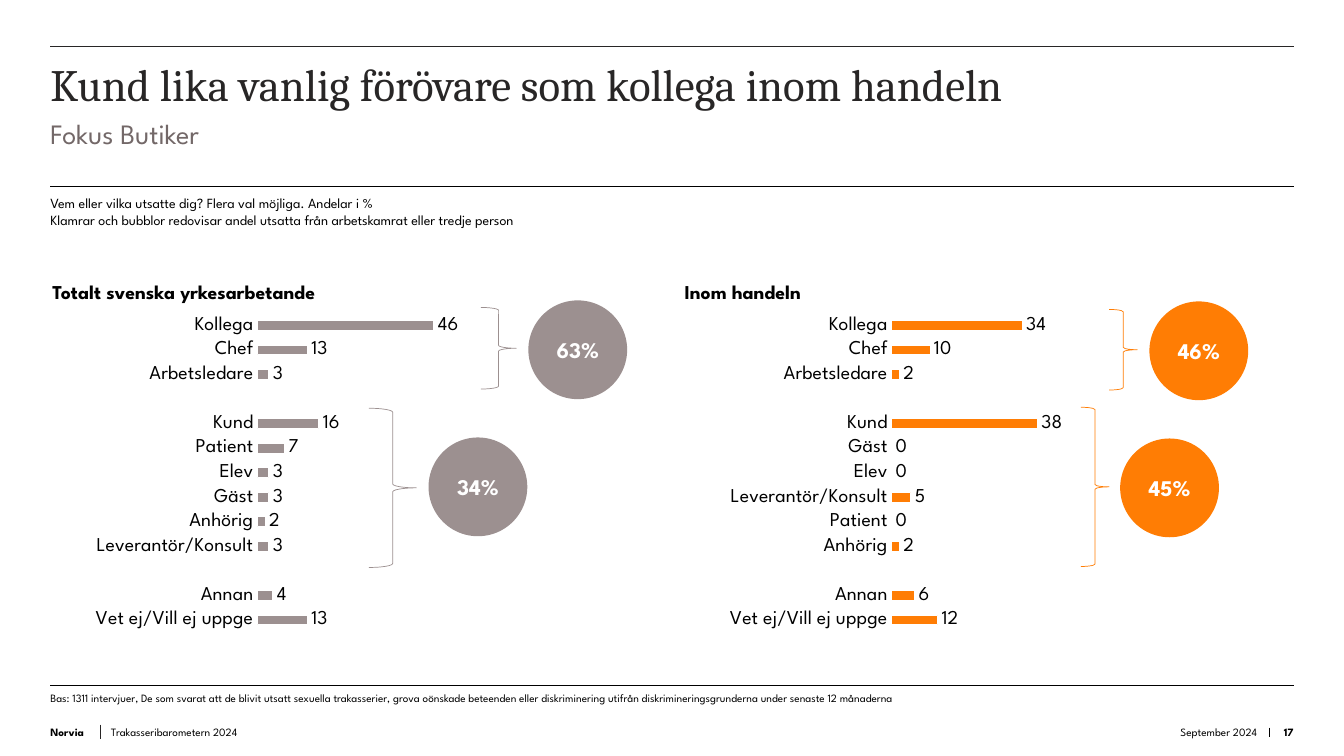
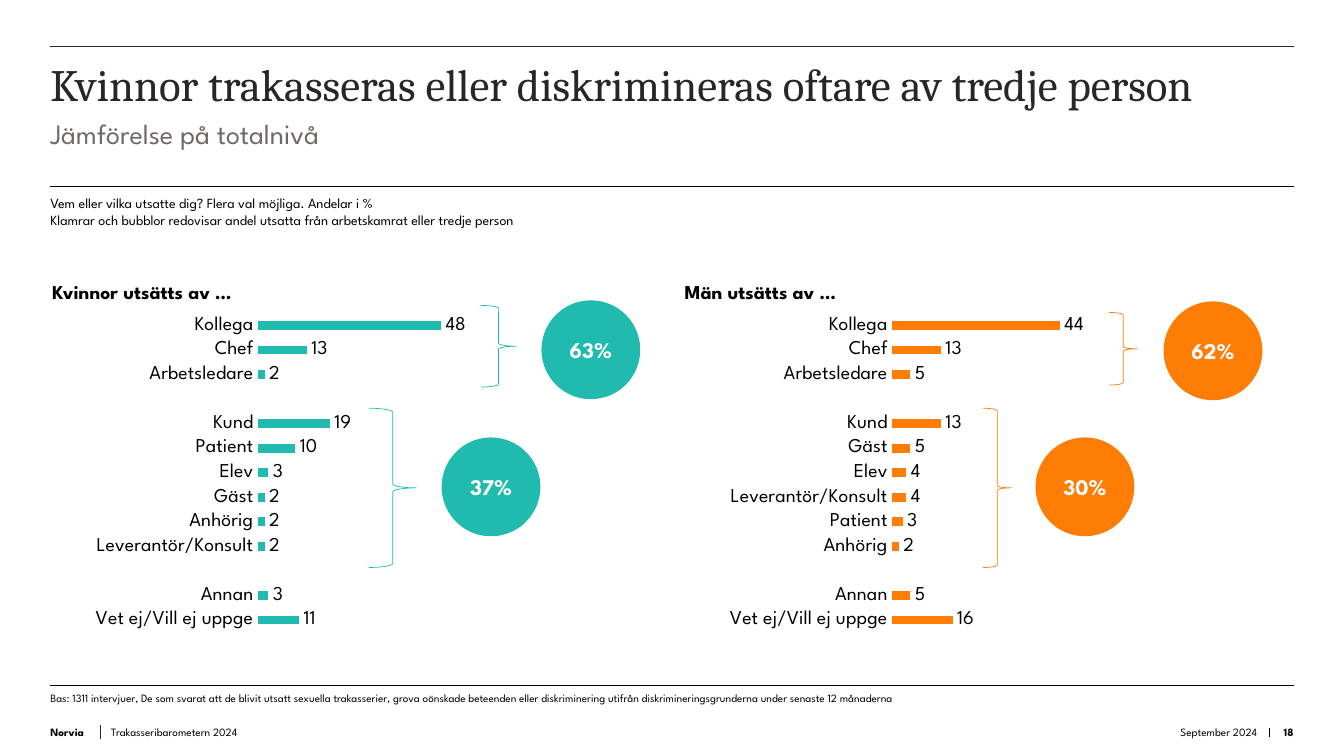
from pptx import Presentation
from pptx.chart.data import CategoryChartData
from pptx.dml.color import RGBColor
from pptx.enum.chart import XL_CHART_TYPE, XL_LABEL_POSITION, XL_TICK_MARK
from pptx.enum.shapes import MSO_CONNECTOR, MSO_SHAPE
from pptx.enum.text import MSO_ANCHOR, PP_ALIGN
from pptx.oxml import parse_xml
from pptx.oxml.ns import nsdecls, qn
from pptx.oxml.xmlchemy import OxmlElement
from pptx.util import Pt

BAR_CLUSTERED = XL_CHART_TYPE.BAR_CLUSTERED
OUTSIDE_END = XL_LABEL_POSITION.OUTSIDE_END
NO_TICK = XL_TICK_MARK.NONE
STRAIGHT = MSO_CONNECTOR.STRAIGHT
ELLIPSE, RIGHT_BRACE = MSO_SHAPE.OVAL, MSO_SHAPE.RIGHT_BRACE
TOP, MIDDLE, BOTTOM = MSO_ANCHOR.TOP, MSO_ANCHOR.MIDDLE, MSO_ANCHOR.BOTTOM
LEFT, CENTER, RIGHT = PP_ALIGN.LEFT, PP_ALIGN.CENTER, PP_ALIGN.RIGHT

EMU_PER_PX = 9144  # 100 px to the inch
SLIDE_WIDTH, SLIDE_HEIGHT = 1333, 750
MARGIN, RIGHT_EDGE = 50, 1283
CONTENT_WIDTH = RIGHT_EDGE - MARGIN
PANEL_TOP, PANEL_WIDTH, PANEL_HEIGHT = 278, 604, 364
BUBBLE = 98

COLORS = {
    "black": "000000",
    "ink": "282626",
    "muted": "736868",
    "white": "FFFFFF",
    "grey": "9C9090",
    "orange": "FF7D04",
    "teal": "20BAAF",
}
SERIF, SANS = "Cambria", "League Spartan"

QUESTION = (
    "Vem eller vilka utsatte dig? Flera val möjliga. Andelar i %\n"
    "Klamrar och bubblor redovisar andel utsatta från arbetskamrat eller tredje person"
)
BASE = (
    "Bas: 1311 intervjuer, De som svarat att de blivit utsatt sexuella trakasserier, "
    "grova oönskade beteenden eller diskriminering utifrån diskrimineringsgrunderna "
    "under senaste 12 månaderna"
)
COLLEAGUES = ["Kollega", "Chef", "Arbetsledare", ""]
OTHERS = ["", "Annan", "Vet ej/Vill ej uppge"]
LEFT_CATEGORIES = COLLEAGUES + [
    "Kund", "Patient", "Elev", "Gäst", "Anhörig", "Leverantör/Konsult"] + OTHERS
RIGHT_CATEGORIES = COLLEAGUES + [
    "Kund", "Gäst", "Elev", "Leverantör/Konsult", "Patient", "Anhörig"] + OTHERS

# Each group is a brace box, the left and top of its bubble, and the bubble text.
SLIDES = [
    {
        "title": "Kund lika vanlig förövare som kollega inom handeln",
        "subtitle": "Fokus Butiker",
        "number": 17,
        "panels": [
            {
                "heading": "Totalt svenska yrkesarbetande",
                "color": "grey",
                "values": [46, 13, 3, None, 16, 7, 3, 3, 2, 3, None, 4, 13],
                "groups": [((477, 305, 35, 81), (524, 298), "63%"),
                           ((366, 405, 47, 158), (425, 434), "34%")],
            },
            {
                "heading": "Inom handeln",
                "color": "orange",
                "values": [34, 10, 2, None, 38, 0, 0, 5, 0, 2, None, 6, 12],
                "groups": [((1100, 307, 28, 80), (1140, 299), "46%"),
                           ((1072, 404, 28, 158), (1111, 435), "45%")],
            },
        ],
    },
    {
        "title": "Kvinnor trakasseras eller diskrimineras oftare av tredje person",
        "subtitle": "Jämförelse på totalnivå",
        "number": 18,
        "panels": [
            {
                "heading": "Kvinnor utsätts av …",
                "color": "teal",
                "values": [48, 13, 2, None, 19, 10, 3, 2, 2, 2, None, 3, 11],
                "groups": [((477, 303, 35, 81), (537, 298), "63%"),
                           ((366, 405, 47, 158), (438, 434), "37%")],
            },
            {
                "heading": "Män utsätts av …",
                "color": "orange",
                "values": [44, 13, 5, None, 13, 5, 4, 4, 3, 2, None, 5, 16],
                "groups": [((1100, 310, 28, 72), (1154, 299), "62%"),
                           ((975, 405, 28, 158), (1027, 434), "30%")],
            },
        ],
    },
]


def px(*lengths):
    return [length * EMU_PER_PX for length in lengths]


def rgb(color):
    return RGBColor.from_string(COLORS[color])


class Deck:
    """Holds the style and the slide being built."""

    def __init__(self):
        self.presentation = Presentation()
        self.presentation.slide_width, self.presentation.slide_height = px(
            SLIDE_WIDTH, SLIDE_HEIGHT)
        self.slide = None

    def add_slide(self):
        self.slide = self.presentation.slides.add_slide(
            self.presentation.slide_layouts[6])

    def style_font(self, font, size, color="black", bold=False, name=SANS):
        font.name = name
        font.size = Pt(size)
        font.bold = bold
        font.color.rgb = rgb(color)

    def fill_frame(self, shape, text, size, align=LEFT, anchor=TOP, **font):
        """Set the text of a shape, without insets."""
        frame = shape.text_frame
        frame.text = text
        frame.word_wrap = True
        frame.vertical_anchor = anchor
        frame.margin_left = frame.margin_right = 0
        frame.margin_top = frame.margin_bottom = 0
        for paragraph in frame.paragraphs:
            paragraph.alignment = align
            for run in paragraph.runs:
                self.style_font(run.font, size, **font)

    def text(self, box, text, size, **style):
        shape = self.slide.shapes.add_textbox(*px(*box))
        self.fill_frame(shape, text, size, **style)

    def line(self, x1, y1, x2, y2, color="black"):
        connector = self.slide.shapes.add_connector(STRAIGHT, *px(x1, y1, x2, y2))
        connector.line.color.rgb = rgb(color)
        connector.line.width = Pt(0.5)
        connector._element.spPr.append(OxmlElement("a:effectLst"))

    def rule(self, y, color="black"):
        """Draw a line across the content width."""
        self.line(MARGIN, y, RIGHT_EDGE, y, color)

    def brace(self, box, color):
        shape = self.slide.shapes.add_shape(RIGHT_BRACE, *px(*box))
        shape.shadow.inherit = False
        shape.fill.background()
        shape.line.color.rgb = rgb(color)
        shape.line.width = Pt(0.5)

    def bubble(self, left, top, text, color):
        shape = self.slide.shapes.add_shape(ELLIPSE, *px(left, top, BUBBLE, BUBBLE))
        shape.shadow.inherit = False
        shape.fill.solid()
        shape.fill.fore_color.rgb = rgb(color)
        shape.line.fill.background()
        self.fill_frame(shape, text, 16, align=CENTER, anchor=MIDDLE,
                        color="white", bold=True)

    def bar_chart(self, left, categories, values, color):
        data = CategoryChartData(number_format="0")
        data.categories = categories
        data.add_series("Series 1", values)
        chart = self.slide.shapes.add_chart(
            BAR_CLUSTERED, *px(left, PANEL_TOP, PANEL_WIDTH, PANEL_HEIGHT), data).chart
        chart.has_legend = False
        chart.has_title = False
        self.style_font(chart.font, 14)

        category_axis = chart.category_axis
        category_axis.reverse_order = True
        category_axis.major_tick_mark = NO_TICK
        category_axis.minor_tick_mark = NO_TICK
        category_axis.format.line.fill.background()
        value_axis = chart.value_axis
        value_axis.minimum_scale, value_axis.maximum_scale = 0, 100
        value_axis.has_major_gridlines = False
        value_axis.visible = False

        plot = chart.plots[0]
        plot.gap_width = 153
        plot.vary_by_categories = False
        plot.has_data_labels = True
        labels = plot.data_labels
        labels.show_value = True
        labels.number_format = "0"
        labels.number_format_is_linked = False
        labels.position = OUTSIDE_END
        self.style_font(labels.font, 14)
        series = plot.series[0]
        series.format.fill.solid()
        series.format.fill.fore_color.rgb = rgb(color)
        series.format.line.color.rgb = rgb("white")
        series.format.line.width = Pt(0.75)
        self.place_plot(chart, x=0.34, y=0.09, w=0.63, h=0.87)

    def place_plot(self, chart, **fractions):
        """Fix the inner plot area as fractions of the chart."""
        plot_area = chart._chartSpace.chart.plotArea
        for layout in plot_area.findall(qn("c:layout")):
            plot_area.remove(layout)
        sizes = "".join(f'<c:{key} val="{value}"/>' for key, value in fractions.items())
        plot_area.insert(0, parse_xml(
            f'<c:layout {nsdecls("c")}><c:manualLayout><c:layoutTarget val="inner"/>'
            f'<c:xMode val="edge"/><c:yMode val="edge"/>{sizes}'
            f'</c:manualLayout></c:layout>'))

    def frame(self, title, subtitle, number):
        """Add the header, question, base note and footer."""
        self.rule(46, "ink")
        self.text((MARGIN, 56, CONTENT_WIDTH, 61), title, 32, color="ink", name=SERIF)
        self.text((MARGIN, 116, CONTENT_WIDTH, 46), subtitle, 20, color="muted")
        self.rule(185)
        self.text((MARGIN, 193, CONTENT_WIDTH, 35), QUESTION, 10)
        self.rule(680)
        self.text((MARGIN, 686, 1157, 20), BASE, 8)
        self.text((MARGIN, 716, 50, 17), "Norvia", 8, anchor=BOTTOM, bold=True)
        self.line(100, 719, 100, 733, "ink")
        self.text((110, 716, 780, 17), "Trakasseribarometern 2024", 8, anchor=BOTTOM)
        self.text((1027, 716, 220, 17), "September 2024", 8, align=RIGHT, anchor=BOTTOM)
        self.line(1259, 722, 1259, 731)
        self.text((1259, 716, 24, 17), str(number), 8, align=RIGHT, anchor=BOTTOM,
                  bold=True)

    def panel(self, left, heading_left, categories, heading, color, values, groups):
        self.bar_chart(left, categories, values, color)
        self.text((heading_left, PANEL_TOP, 382, 24), heading, 14, bold=True)
        for brace_box, bubble_corner, share in groups:
            self.brace(brace_box, color)
            self.bubble(*bubble_corner, share, color)


def main():
    deck = Deck()
    sides = [(MARGIN, 52, LEFT_CATEGORIES), (679, 679, RIGHT_CATEGORIES)]
    for content in SLIDES:
        deck.add_slide()
        deck.frame(content["title"], content["subtitle"], content["number"])
        for side, panel in zip(sides, content["panels"]):
            deck.panel(*side, **panel)
    deck.presentation.save("out.pptx")


if __name__ == "__main__":
    main()
